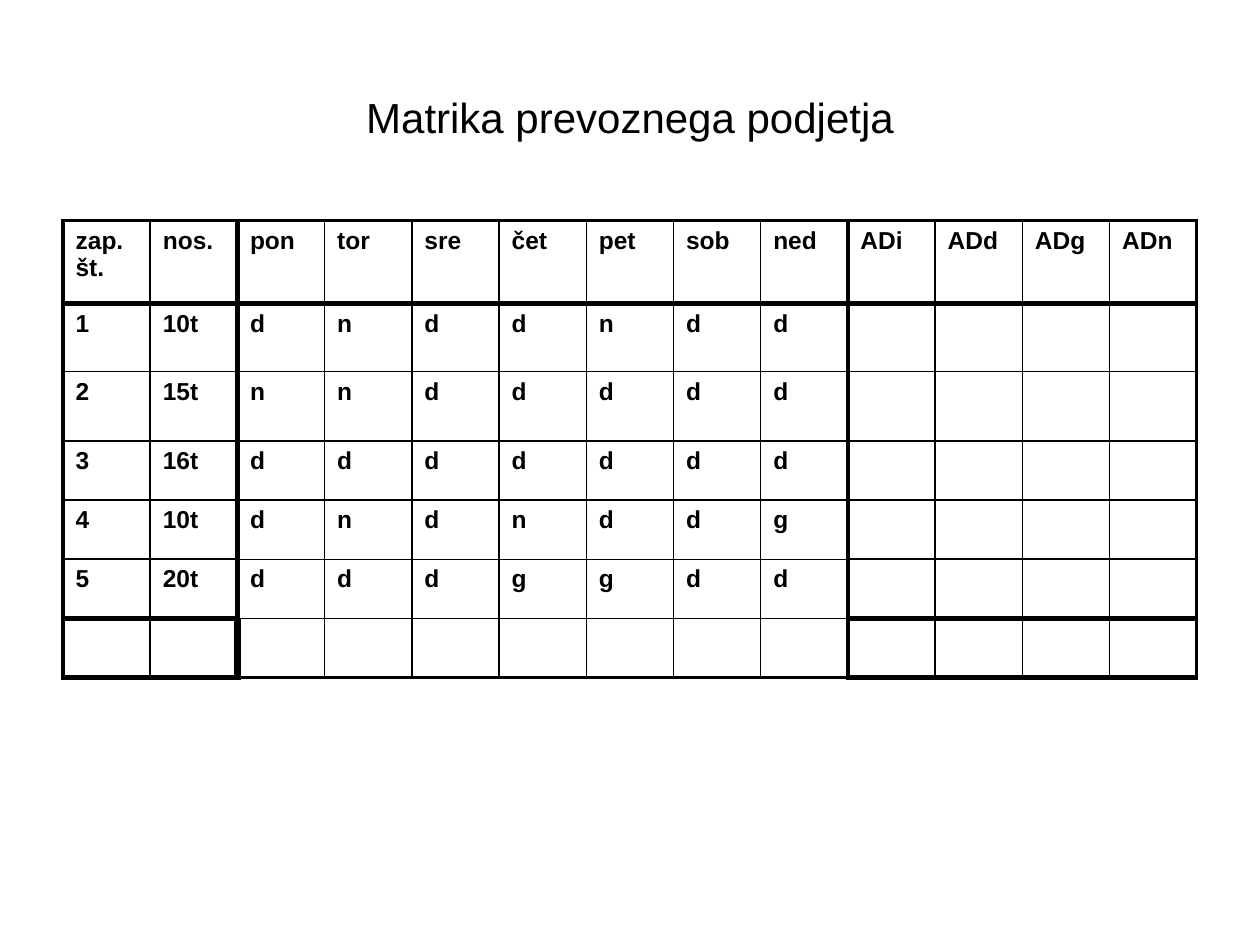
from lxml.etree import SubElement
from pptx import Presentation
from pptx.dml.color import RGBColor
from pptx.enum.text import MSO_ANCHOR, PP_ALIGN
from pptx.oxml.ns import qn
from pptx.util import Inches, Pt

BLACK = RGBColor(0, 0, 0)
FONT = "Arial"
ROWS = [
    ["zap. št.", "nos.", "pon", "tor", "sre", "čet", "pet", "sob", "ned",
     "ADi", "ADd", "ADg", "ADn"],
    ["1", "10t", *"dnddndd"],
    ["2", "15t", *"nnddddd"],
    ["3", "16t", *"ddddddd"],
    ["4", "10t", *"dndnddg"],
    ["5", "20t", *"dddggdd"],
    [],
]
ROW_HEIGHTS = [0.66, 0.54, 0.55, 0.47, 0.47, 0.47, 0.47]
N_ROWS, N_COLS = len(ROWS), len(ROWS[0])
DAYS = range(2, 9)  # columns of the weekdays
THIN, MEDIUM, FRAME, THICK, HEAVY = 1, 1.5, 2.25, 3, 4.5


def vertical_rule(row, edge):
    """Width of the rule at a column edge, counted from the left."""
    if edge in (0, N_COLS):
        return FRAME
    if edge == DAYS.start:
        return HEAVY if row == N_ROWS - 1 else THICK
    return THICK if edge == DAYS.stop else THIN


def horizontal_rule(edge, col):
    """Width of the rule at a row edge, counted from the top."""
    if edge < 2:
        return (FRAME, THICK)[edge]
    if col in DAYS:
        return FRAME if edge == N_ROWS else THIN
    return {N_ROWS - 2: MEDIUM, N_ROWS - 1: THICK, N_ROWS: THICK}.get(edge, THIN)


def set_borders(cell, row, col):
    widths = {
        "a:lnL": vertical_rule(row, col),
        "a:lnR": vertical_rule(row, col + 1),
        "a:lnT": horizontal_rule(row, col),
        "a:lnB": horizontal_rule(row + 1, col),
    }
    tcPr = cell._tc.get_or_add_tcPr()
    for tag, width in widths.items():
        ln = SubElement(tcPr, qn(tag), w=str(Pt(width)))
        fill = SubElement(ln, qn("a:solidFill"))
        SubElement(fill, qn("a:srgbClr"), val=str(BLACK))


def add_text(p, text, size, bold=False):
    r = p.add_run()
    r.text = text
    r.font.name, r.font.size, r.font.bold = FONT, Pt(size), bold
    r.font.color.rgb = BLACK


def place_title(s, left, top, width, height):
    title = s.shapes.title
    title.left, title.top, title.width, title.height = left, top, width, height
    tf = title.text_frame
    tf.vertical_anchor = MSO_ANCHOR.MIDDLE
    p = tf.paragraphs[0]
    p.alignment = PP_ALIGN.CENTER
    add_text(p, "Matrika prevoznega podjetja", 24)


def place_schedule(s, left, top, width, height):
    table = s.shapes.add_table(N_ROWS, N_COLS, left, top, width, height).table
    table.first_row = table.horz_banding = False
    for column in table.columns:
        column.width = width // N_COLS
    for i, row_height in enumerate(ROW_HEIGHTS):
        table.rows[i].height = int(height * row_height / sum(ROW_HEIGHTS))
        for j in range(N_COLS):
            cell = table.cell(i, j)
            set_borders(cell, i, j)
            cell.fill.background()
            if j < len(ROWS[i]):
                p = cell.text_frame.paragraphs[0]
                p.space_before = Pt(2.8)
                add_text(p, ROWS[i][j], 14, bold=True)


def main():
    prs = Presentation()
    prs.slide_width, prs.slide_height = Inches(10), Inches(7.5)
    w, h = prs.slide_width, prs.slide_height
    s = prs.slides.add_slide(prs.slide_layouts[5])
    margin, content = int(w * 0.05), int(w * 0.9)
    place_title(s, margin, int(h * 0.04), content, int(h / 6))
    place_schedule(s, margin, int(h * 7 / 30), content, Inches(sum(ROW_HEIGHTS)))
    prs.save("out.pptx")


if __name__ == "__main__":
    main()
